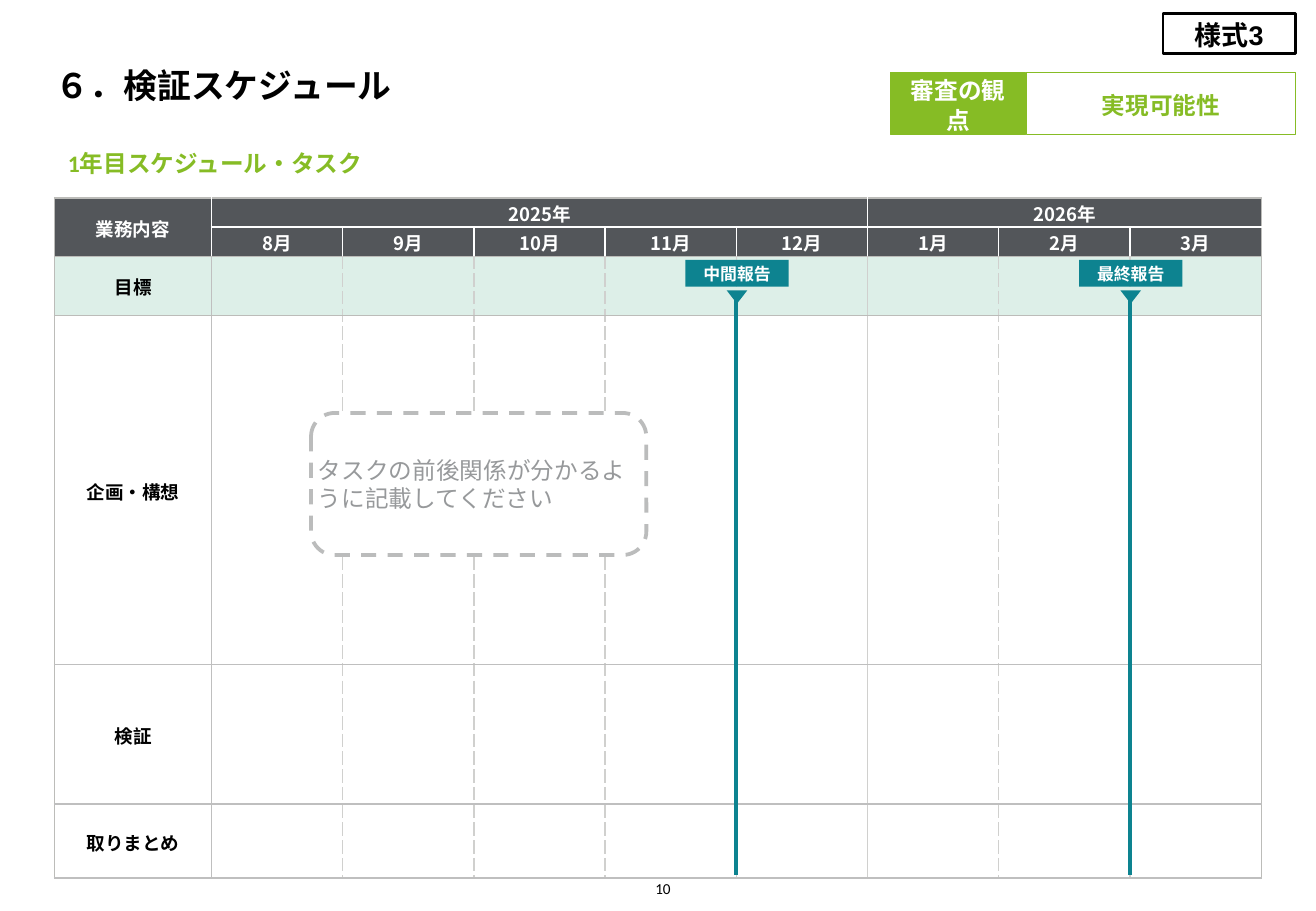
from dataclasses import dataclass
from typing import Optional

from lxml.etree import SubElement
from pptx import Presentation
from pptx.dml.color import RGBColor
from pptx.enum.dml import MSO_LINE_DASH_STYLE as Dash
from pptx.enum.shapes import MSO_CONNECTOR as Connector, MSO_SHAPE as Shape
from pptx.enum.text import MSO_ANCHOR as Anchor, PP_ALIGN as Align
from pptx.oxml.ns import qn
from pptx.util import Emu, Pt

CJK = "Noto Sans CJK JP"
BLACK, WHITE, GREEN, TEAL = "000000", "FFFFFF", "86BC25", "0D8390"
HEADER, MINT, GRID, RULE, MONTH_RULE = "53565A", "DDEFE8", "BCBCB9", "BFBFBF", "D0D0CE"

TABLE_LEFT, TABLE_TOP = 45, 163
TASK_WIDTH, MONTH_WIDTH = 129, 108
ROW_HEIGHTS = [24, 24, 49, 287, 115, 61]
MONTHS = [8, 9, 10, 11, 12, 1, 2, 3]
MONTHS_2025 = 5
TASKS = ["目標", "企画・構想", "検証", "取りまとめ"]
COLUMNS = len(MONTHS) + 1


@dataclass
class Style:
    size: float
    colour: str
    font: str = "Calibri"
    bold: bool = True
    align: Align = Align.LEFT
    spacing: Optional[float] = None


@dataclass
class Label:
    text: str
    left: int
    top: int
    width: int
    height: int
    style: Style
    kind: Optional[Shape] = None
    fill: Optional[str] = None
    line: Optional[str] = None
    line_width: float = 0.5
    dash: Optional[Dash] = None
    margins: tuple[int, int] = (0, 0)
    anchor: Anchor = Anchor.MIDDLE
    wrap: bool = True


@dataclass
class Milestone:
    text: str
    after_months: int


@dataclass
class Edge:
    colour: str
    dashed: bool = False


BADGE = Style(14, GREEN, "Arial", align=Align.CENTER, spacing=1.06)
LABELS = [
    Label("10", 532, 720, 20, 19, Style(9, BLACK, bold=False, align=Align.RIGHT),
          anchor=Anchor.BOTTOM, wrap=False),
    Label("様式3", 957, 11, 109, 33, Style(16, BLACK, "Arial", align=Align.CENTER, spacing=1.06),
          Shape.RECTANGLE, WHITE, BLACK, 1.5, margins=(8, 8)),
    Label("1年目スケジュール・タスク", 46, 111, 476, 47, Style(14, GREEN), margins=(10, 5)),
    Label("実現可能性", 845, 60, 221, 51, BADGE, Shape.RECTANGLE, WHITE, GREEN, margins=(8, 8)),
    Label("審査の観点", 733, 60, 111, 51,
          Style(14, WHITE, "Arial", align=Align.CENTER, spacing=1.06),
          Shape.RECTANGLE, GREEN, GREEN, margins=(8, 8)),
    Label("タスクの前後関係が分かるように記載してください", 256, 340, 276, 117,
          Style(14, "97999B", bold=False), Shape.ROUNDED_RECTANGLE, WHITE, "BBBCBC", 2.25, Dash.DASH),
]
MILESTONES = [Milestone("最終報告", 7), Milestone("中間報告", 4)]

HORIZONTAL = [Edge(c) for c in (GRID, WHITE, GRID, GRID, RULE, RULE, RULE)]


def px(length: int) -> Emu:
    return Emu(length * 9144)


def rgb(colour: str) -> RGBColor:
    return RGBColor.from_string(colour)


def write(frame, text: str, style: Style) -> None:
    para = frame.paragraphs[0]
    para.text = text
    para.alignment = style.align
    if style.spacing:
        para.line_spacing = style.spacing
    font = para.font
    font.size, font.bold, font.name = Pt(style.size), style.bold, style.font
    font.color.rgb = rgb(style.colour)
    defaults = para._p.pPr.find(qn("a:defRPr"))
    SubElement(defaults, qn("a:ea")).set("typeface", CJK)


def set_frame(frame, margins: tuple[int, int], anchor: Anchor, wrap: bool) -> None:
    frame.margin_left = frame.margin_right = px(margins[0])
    frame.margin_top = frame.margin_bottom = px(margins[1])
    frame.vertical_anchor, frame.word_wrap = anchor, wrap


def add_filled(page, kind: Shape, bounds: tuple[int, ...], fill: str):
    shape = page.shapes.add_shape(kind, *map(px, bounds))
    shape.shadow.inherit = False
    shape.fill.solid()
    shape.fill.fore_color.rgb = rgb(fill)
    shape.line.fill.background()
    return shape


def add_label(page, label: Label) -> None:
    bounds = (label.left, label.top, label.width, label.height)
    if label.kind is None:
        box = page.shapes.add_textbox(*map(px, bounds))
    else:
        box = add_filled(page, label.kind, bounds, label.fill)
        if label.line:
            box.line.color.rgb = rgb(label.line)
            box.line.width = Pt(label.line_width)
            box.line.dash_style = label.dash
    set_frame(box.text_frame, label.margins, label.anchor, label.wrap)
    write(box.text_frame, label.text, label.style)


def add_milestone(page, milestone: Milestone) -> None:
    x = TABLE_LEFT + TASK_WIDTH + milestone.after_months * MONTH_WIDTH
    line = page.shapes.add_connector(Connector.STRAIGHT, px(x), px(241), px(x), px(720))
    line.line.color.rgb, line.line.width = rgb(TEAL), Pt(2.25)
    SubElement(line._element.spPr, qn("a:effectLst"))
    add_filled(page, Shape.ISOSCELES_TRIANGLE, (x - 8, 239, 17, 11), TEAL).rotation = 180
    add_label(page, Label(milestone.text, x - 42, 214, 85, 22,
                          Style(10, WHITE, CJK, align=Align.CENTER),
                          Shape.RECTANGLE, TEAL, margins=(4, 4), wrap=False))


def vertical_edge(row: int, boundary: int) -> Edge:
    if boundary in (0, COLUMNS):
        return Edge(GRID)
    if row < 2:
        return Edge(WHITE)
    if boundary == 1:
        return Edge(RULE)
    return Edge(MONTH_RULE, dashed=boundary != MONTHS_2025 + 1)


def set_borders(cell, row: int, column: int) -> None:
    right = column + (cell.span_width if cell.is_merge_origin else 1)
    bottom = row + (cell.span_height if cell.is_merge_origin else 1)
    edges = {"L": vertical_edge(row, column), "R": vertical_edge(row, right),
             "T": HORIZONTAL[row], "B": HORIZONTAL[bottom]}
    for side, edge in edges.items():
        line = SubElement(cell._tc.get_or_add_tcPr(), qn(f"a:ln{side}"), w=str(Pt(1)))
        SubElement(SubElement(line, qn("a:solidFill")), qn("a:srgbClr"), val=edge.colour)
        SubElement(line, qn("a:prstDash"), val="sysDash" if edge.dashed else "solid")


def add_schedule(page) -> None:
    width = TASK_WIDTH + len(MONTHS) * MONTH_WIDTH
    table = page.shapes.add_table(len(ROW_HEIGHTS), COLUMNS, px(TABLE_LEFT), px(TABLE_TOP),
                                  px(width), px(sum(ROW_HEIGHTS))).table
    table.first_row = table.horz_banding = False
    for index, column in enumerate(table.columns):
        column.width = px(MONTH_WIDTH if index else TASK_WIDTH)
    for row, height in zip(table.rows, ROW_HEIGHTS):
        row.height = px(height)

    year_2026 = MONTHS_2025 + 1
    table.cell(0, 0).merge(table.cell(1, 0))
    table.cell(0, 1).merge(table.cell(0, MONTHS_2025))
    table.cell(0, year_2026).merge(table.cell(0, COLUMNS - 1))
    texts = {(0, 0): "業務内容", (0, 1): "2025年", (0, year_2026): "2026年"}
    texts |= {(1, column): f"{month}月" for column, month in enumerate(MONTHS, 1)}
    texts |= {(row, 0): task for row, task in enumerate(TASKS, 2)}

    fills = [HEADER, HEADER, MINT, WHITE, WHITE, WHITE]
    for row, fill in enumerate(fills):
        style = Style(11, WHITE if row < 2 else BLACK, CJK, align=Align.CENTER, spacing=1.06)
        for column in range(COLUMNS):
            cell = table.cell(row, column)
            if not cell.is_spanned:
                set_borders(cell, row, column)
            cell.fill.solid()
            cell.fill.fore_color.rgb = rgb(fill)
            cell.margin_left = cell.margin_right = px(4)
            cell.margin_top = cell.margin_bottom = 0
            cell.vertical_anchor = Anchor.MIDDLE
            if (row, column) in texts:
                write(cell.text_frame, texts[row, column], style)


def main() -> None:
    deck = Presentation()
    deck.slide_width, deck.slide_height = px(1083), px(750)
    page = deck.slides.add_slide(deck.slide_layouts[5])
    title = page.shapes.title
    title.left, title.top, title.width, title.height = map(px, (46, 20, 992, 67))
    set_frame(title.text_frame, (0, 0), Anchor.BOTTOM, True)
    write(title.text_frame, "６．検証スケジュール", Style(20, BLACK))
    add_schedule(page)
    for milestone in MILESTONES:
        add_milestone(page, milestone)
    for label in LABELS:
        add_label(page, label)
    deck.save("out.pptx")


if __name__ == "__main__":
    main()
